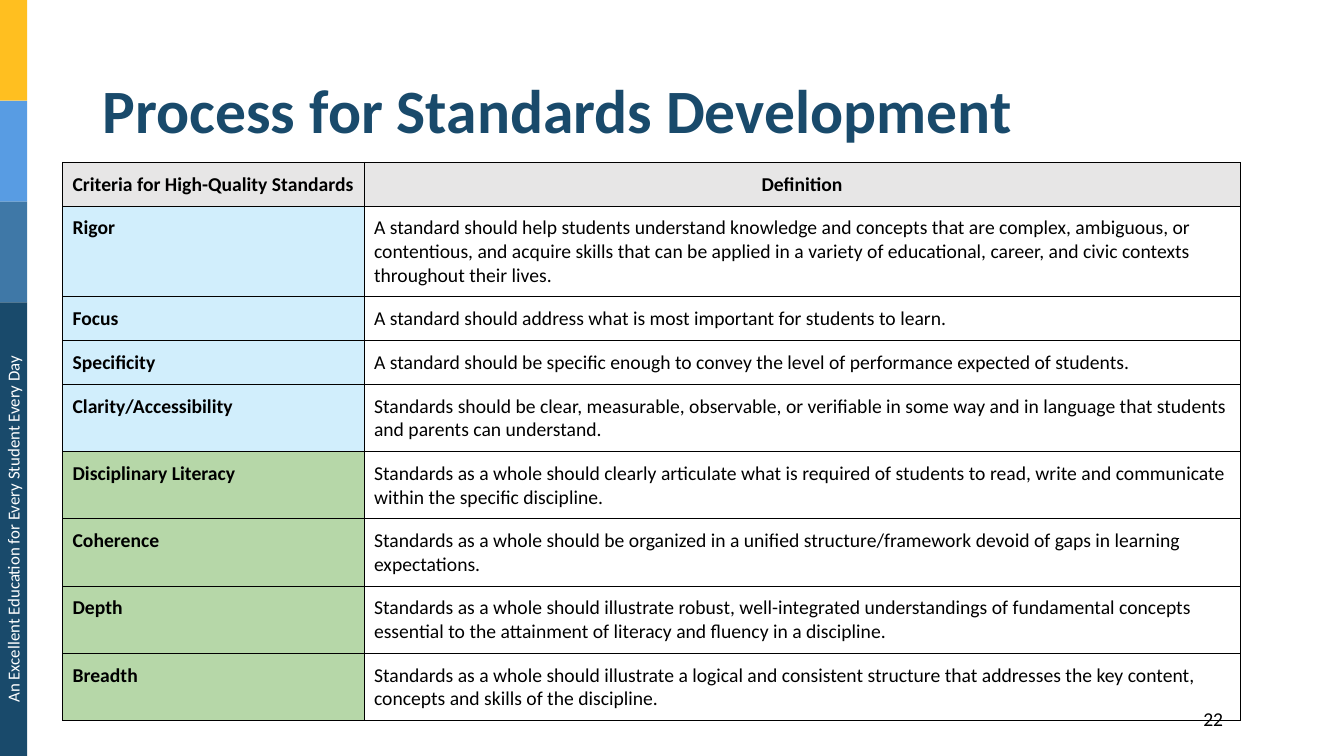
import pptx
import pptx.dml.color
import pptx.enum.shapes
import pptx.enum.text
import pptx.oxml
import pptx.oxml.ns
import pptx.util
from pptx.util import Inches

ALIGN = pptx.enum.text.PP_ALIGN
ANCHOR = pptx.enum.text.MSO_ANCHOR
FONT = "Calibri"
NAVY, BLACK, WHITE = "194A6B", "000000", "FFFFFF"
HEADER_GREY, SINGLE_BLUE, WHOLE_GREEN = "E7E6E6", "D1EEFC", "B6D7A8"

# Top, height and colour of each part of the side bar
SIDE_BANDS = [(0, 1, "FFBF20"), (1, 1, "589CE3"), (2, 1, "3F78A7"), (3, 4.5, NAVY)]

HEADERS = ("Criteria for High-Quality Standards", "Definition")
SINGLE_STANDARD_CRITERIA = [
    ("Rigor", "A standard should help students understand knowledge and concepts that are "
     "complex, ambiguous, or contentious, and acquire skills that can be applied in a variety "
     "of educational, career, and civic contexts throughout their lives."),
    ("Focus", "A standard should address what is most important for students to learn."),
    ("Specificity", "A standard should be specific enough to convey the level of performance "
     "expected of students."),
    ("Clarity/Accessibility", "Standards should be clear, measurable, observable, or verifiable "
     "in some way and in language that students and parents can understand."),
]
WHOLE_SET_CRITERIA = [
    ("Disciplinary Literacy", "Standards as a whole should clearly articulate what is required "
     "of students to read, write and communicate within the specific discipline."),
    ("Coherence", "Standards as a whole should be organized in a unified structure/framework "
     "devoid of gaps in learning expectations."),
    ("Depth", "Standards as a whole should illustrate robust, well-integrated understandings of "
     "fundamental concepts essential to the attainment of literacy and fluency in a discipline."),
    ("Breadth", "Standards as a whole should illustrate a logical and consistent structure that "
     "addresses the key content, concepts and skills of the discipline."),
]


def rgb(hex_colour):
    return pptx.dml.color.RGBColor.from_string(hex_colour)


def style_paragraph(paragraph, size, colour, bold=False, align=ALIGN.LEFT):
    paragraph.alignment = align
    paragraph.font.name = FONT
    paragraph.font.size = pptx.util.Pt(size)
    paragraph.font.bold = bold
    paragraph.font.color.rgb = rgb(colour)


def add_label(slide, text, left, top, width, height, size, colour,
              bold=False, align=ALIGN.LEFT, anchor=ANCHOR.TOP):
    label = slide.shapes.add_textbox(Inches(left), Inches(top), Inches(width), Inches(height))
    frame = label.text_frame
    frame.word_wrap = True
    frame.vertical_anchor = anchor
    frame.text = text
    style_paragraph(frame.paragraphs[0], size, colour, bold, align)
    return label


def add_side_band(slide, top, height, colour):
    band = slide.shapes.add_shape(pptx.enum.shapes.MSO_SHAPE.RECTANGLE,
                                  0, Inches(top), Inches(0.27), Inches(height))
    band.shadow.inherit = False
    band.fill.solid()
    band.fill.fore_color.rgb = rgb(colour)
    band.line.fill.background()


def border_cell(cell):
    """Draw thin black lines on all four sides; call before filling the cell."""
    properties = cell._tc.get_or_add_tcPr()
    for side in ("lnL", "lnR", "lnT", "lnB"):
        properties.append(pptx.oxml.parse_xml(
            f'<a:{side} {pptx.oxml.ns.nsdecls("a")} w="{pptx.util.Pt(0.75)}">'
            f'<a:solidFill><a:srgbClr val="{BLACK}"/></a:solidFill></a:{side}>'))


def fill_cell(cell, text, fill=None, bold=False, align=ALIGN.LEFT):
    cell.margin_left = cell.margin_right = Inches(0.1)
    cell.margin_top = cell.margin_bottom = Inches(0.1)
    border_cell(cell)
    if fill:
        cell.fill.solid()
        cell.fill.fore_color.rgb = rgb(fill)
    else:
        cell.fill.background()
    cell.text = text
    style_paragraph(cell.text_frame.paragraphs[0], 14, BLACK, bold, align)


def add_criteria_table(slide):
    criteria = [(*row, SINGLE_BLUE) for row in SINGLE_STANDARD_CRITERIA]
    criteria += [(*row, WHOLE_GREEN) for row in WHOLE_SET_CRITERIA]
    row_count = len(criteria) + 1
    table = slide.shapes.add_table(row_count, 2, Inches(0.62), Inches(1.61),
                                   Inches(11.68), Inches(0.42 * row_count)).table
    table.horz_banding = False
    table.columns[0].width = Inches(2.99)
    table.columns[1].width = Inches(8.69)
    for column, header in enumerate(HEADERS):
        fill_cell(table.cell(0, column), header, HEADER_GREY, True, ALIGN.CENTER)
    for row, (criterion, definition, colour) in enumerate(criteria, start=1):
        fill_cell(table.cell(row, 0), criterion, colour, bold=True)
        fill_cell(table.cell(row, 1), definition)


def main():
    presentation = pptx.Presentation()
    presentation.slide_width = Inches(13.33)
    presentation.slide_height = Inches(7.5)
    slide = presentation.slides.add_slide(presentation.slide_layouts[6])

    add_label(slide, "22", 11.38, 6.96, 0.85, 0.34, 14, BLACK, align=ALIGN.RIGHT)
    for top, height, colour in SIDE_BANDS:
        add_side_band(slide, top, height, colour)
    motto = add_label(slide, "An Excellent Education for Every Student Every Day",
                      -2.12, 5.1, 4.5, 0.3, 12, WHITE, align=ALIGN.CENTER)
    motto.rotation = 270
    title = add_label(slide, "Process for Standards Development", 0.92, 0.4, 11.5, 1.45,
                      44, NAVY, bold=True, anchor=ANCHOR.MIDDLE)
    title.text_frame.paragraphs[0].line_spacing = 0.9
    add_criteria_table(slide)

    presentation.save("out.pptx")


if __name__ == "__main__":
    main()
